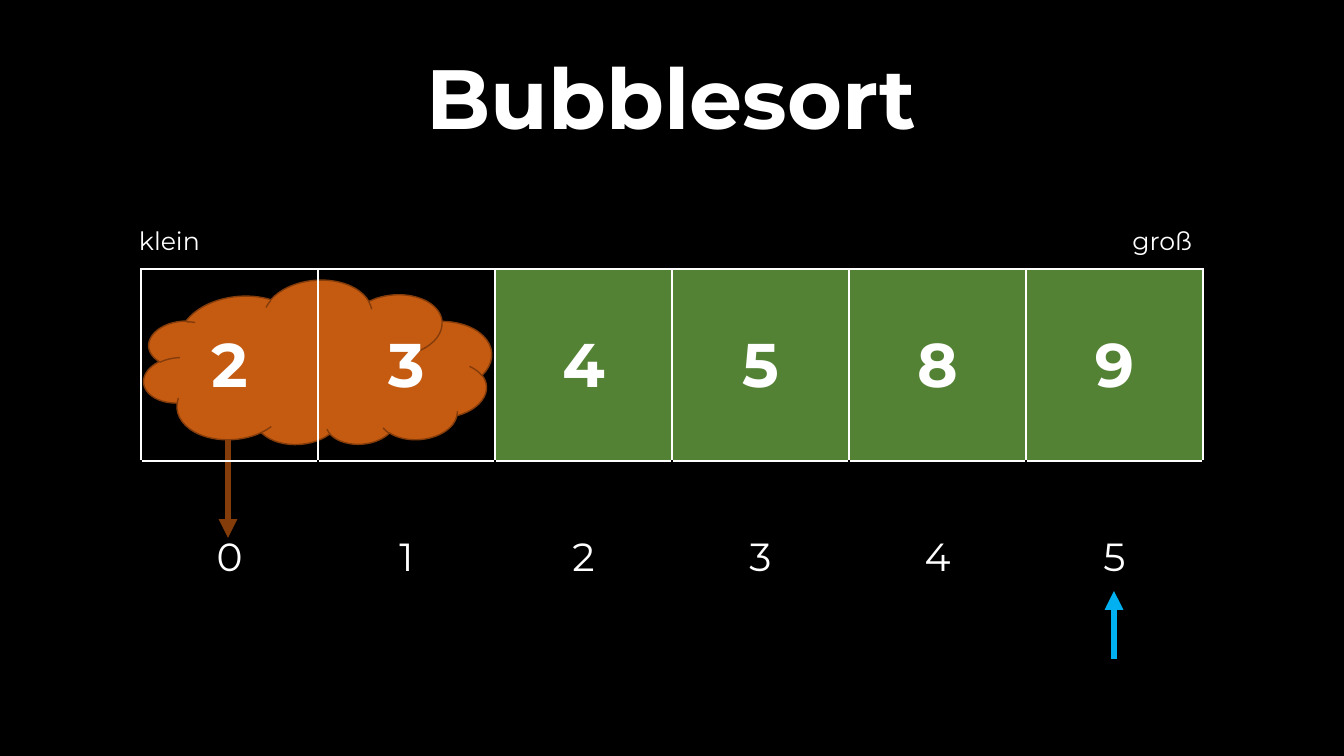
from lxml import etree
from pptx import Presentation
from pptx import util as u
from pptx.dml.color import RGBColor
from pptx.enum import shapes, text
from pptx.oxml import ns

COLORS = {
    "black": "000000",
    "white": "FFFFFF",
    "sorted": "548235",
    "bubble": "C55A11",
    "bubble_edge": "843C0B",
    "pointer": "00B0F0",
}
VALUES = [2, 3, 4, 5, 8, 9]
FIRST_SORTED = 2
LEFT, TOP, CELL_W, CELL_H = 141, 269, 177, 192


def px(n):
    return u.Emu(round(n * 914400 / 100.8))


def rgb(name):
    return RGBColor.from_string(COLORS[name])


class Slide:
    font = "Montserrat"

    def __init__(self, prs):
        self.s = prs.slides.add_slide(prs.slide_layouts[6])
        fill = self.s.background.fill
        fill.solid()
        fill.fore_color.rgb = rgb("black")

    def put_text(self, tf, words, size, bold=False, align=text.PP_ALIGN.CENTER):
        p = tf.paragraphs[0]
        p.alignment = align
        r = p.add_run()
        r.text = words
        r.font.name = self.font
        r.font.size = u.Pt(size)
        r.font.bold = bold
        r.font.color.rgb = rgb("white")
        return p

    def label(self, words, x, y, w, h, size, **style):
        tf = self.s.shapes.add_textbox(*map(px, (x, y, w, h))).text_frame
        tf.word_wrap = True
        tf.vertical_anchor = text.MSO_ANCHOR.MIDDLE
        return self.put_text(tf, words, size, **style)

    def arrow(self, x, y1, y2, color):
        c = self.s.shapes.add_connector(
            shapes.MSO_CONNECTOR.STRAIGHT, px(x), px(y1), px(x), px(y2))
        c.line.width = u.Pt(4.5)
        c.line.color.rgb = rgb(color)
        sp_pr = c._element.spPr
        etree.SubElement(sp_pr.get_or_add_ln(), ns.qn("a:tailEnd"), type="triangle")
        etree.SubElement(sp_pr, ns.qn("a:effectLst"))

    def cloud(self, x, y, w, h, rotation):
        sp = self.s.shapes.add_shape(shapes.MSO_SHAPE.CLOUD, *map(px, (x, y, w, h)))
        sp.shadow.inherit = False
        sp.rotation = rotation
        sp._element.spPr.xfrm.set("flipV", "1")
        sp.fill.solid()
        sp.fill.fore_color.rgb = rgb("bubble")
        sp.line.color.rgb = rgb("bubble_edge")
        sp.line.width = u.Pt(1)

    def borders(self, cell, **sides):
        tc_pr = cell._tc.get_or_add_tcPr()
        for i, side in enumerate("LRTB"):
            ln = etree.Element(ns.qn(f"a:ln{side}"), w=str(u.Pt(1)))
            fill = etree.SubElement(ln, ns.qn("a:solidFill"))
            etree.SubElement(fill, ns.qn("a:srgbClr"), val=COLORS[sides.get(side, "white")])
            tc_pr.insert(i, ln)

    def cell(self, cell, words, size, bold, fill=None, **sides):
        cell.vertical_anchor = text.MSO_ANCHOR.MIDDLE
        self.put_text(cell.text_frame, words, size, bold)
        if fill:
            cell.fill.solid()
            cell.fill.fore_color.rgb = rgb(fill)
        else:
            cell.fill.background()
        self.borders(cell, **sides)

    def array(self, values, x, y, w, h):
        n = len(values)
        table = self.s.shapes.add_table(2, n, px(x), px(y), px(n * w), px(2 * h)).table
        table.first_row = table.horz_banding = False
        for row in table.rows:
            row.height = px(h)
        for i, value in enumerate(values):
            table.columns[i].width = px(w)
            fill = "sorted" if i >= FIRST_SORTED else None
            self.cell(table.cell(0, i), str(value), 44, True, fill)
            self.cell(table.cell(1, i), str(i), 28, False, L="black", R="black", B="black")


def main():
    prs = Presentation()
    prs.slide_width, prs.slide_height = px(1344), px(756)
    s = Slide(prs)
    s.arrow(228, 398, 538, "bubble_edge")
    s.cloud(143, 281, 349, 167, 355.5)
    s.array(VALUES, LEFT, TOP, CELL_W, CELL_H)
    s.label("groß", 1050, 220, 152, 40, 18, align=text.PP_ALIGN.RIGHT)
    s.label("klein", 129, 220, 152, 40, 18, align=text.PP_ALIGN.LEFT)
    s.arrow(1114, 659, 591, "pointer")
    title = s.label("Bubblesort", 15, 31, 1313, 143, 60, bold=True)
    title.line_spacing = 0.9
    title.space_before = u.Pt(10)
    prs.save("out.pptx")


if __name__ == "__main__":
    main()
